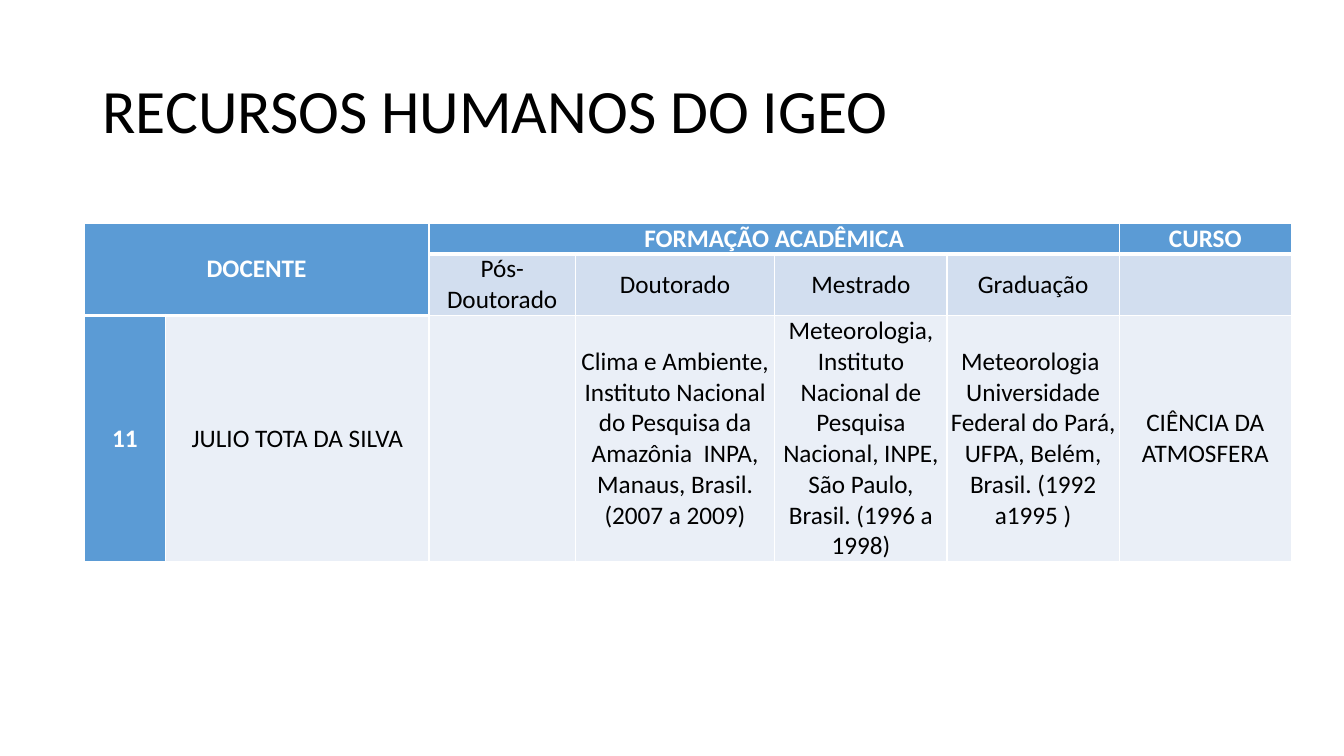
from pptx import Presentation
from pptx.dml.color import RGBColor
from pptx.enum import text as t
from pptx.oxml import parse_xml
from pptx.oxml.ns import nsdecls
from pptx.util import Pt

BLACK, WHITE = "000000", "FFFFFF"
HEADER, SUBHEADER, BODY = "5B9BD5", "D2DEEF", "EAEFF7"

COLUMN_WIDTHS = [58.5, 188, 104.5, 142.5, 123, 123, 123]
ROW_HEIGHTS = [22, 44, 176]
CONTENT = [
    ["DOCENTE", "", "FORMAÇÃO ACADÊMICA", "", "", "", "CURSO"],
    ["", "", "Pós-Doutorado", "Doutorado", "Mestrado", "Graduação", ""],
    ["11", "JULIO TOTA DA SILVA", "",
     "Clima e Ambiente, Instituto Nacional do Pesquisa da Amazônia  INPA, Manaus, Brasil. (2007 a 2009)",
     "Meteorologia, Instituto Nacional de Pesquisa Nacional, INPE, São Paulo, Brasil. (1996 a 1998)",
     "Meteorologia  Universidade Federal do Pará, UFPA, Belém, Brasil. (1992 a1995 )",
     "CIÊNCIA DA ATMOSFERA"],
]


def rgb(color):
    return RGBColor.from_string(color)


def write(frame, words, size=18, color=BLACK, bold=False, align=None, spacing=None):
    frame.vertical_anchor = t.MSO_ANCHOR.MIDDLE
    paragraph = frame.paragraphs[0]
    paragraph.alignment = align
    paragraph.line_spacing = spacing
    font = paragraph.font
    if words:
        run = paragraph.add_run()
        run.text = words
        font = run.font
    font.name, font.size, font.bold = "Calibri", Pt(size), bold
    font.color.rgb = rgb(color)


def set_borders(cell, top, bottom):
    """Draw white cell borders; top and bottom are widths in points."""
    properties = cell._tc.get_or_add_tcPr()
    for index, (side, width) in enumerate([("L", 1), ("R", 1), ("T", top), ("B", bottom)]):
        properties.insert(index, parse_xml(
            f'<a:ln{side} {nsdecls("a")} w="{Pt(width)}"><a:solidFill>'
            f'<a:srgbClr val="{WHITE}"/></a:solidFill></a:ln{side}>'))


def rule_below(row, column):
    """Width of the line under a cell: heavy beneath the header cells."""
    return 3 if row == 0 or (row == 1 and column < 2) else 1


def cell_fill(row, column):
    if row == 0 or column == 0 or (row == 1 and column == 1):
        return HEADER
    return SUBHEADER if row == 1 else BODY


def add_title(slide, left, top, width, height):
    title = slide.shapes.title
    title.left, title.top, title.width, title.height = map(Pt, (left, top, width, height))
    write(title.text_frame, "RECURSOS HUMANOS DO IGEO", size=44,
          align=t.PP_ALIGN.LEFT, spacing=0.9)


def add_staff_table(slide, left, top):
    staff = slide.shapes.add_table(
        len(ROW_HEIGHTS), len(COLUMN_WIDTHS), Pt(left), Pt(top),
        Pt(sum(COLUMN_WIDTHS)), Pt(sum(ROW_HEIGHTS))).table
    for column, width in zip(staff.columns, COLUMN_WIDTHS):
        column.width = Pt(width)
    for row, height in zip(staff.rows, ROW_HEIGHTS):
        row.height = Pt(height)

    for r, entries in enumerate(CONTENT):
        for c, words in enumerate(entries):
            cell = staff.cell(r, c)
            fill = cell_fill(r, c)
            is_header = fill == HEADER
            cell.fill.solid()
            cell.fill.fore_color.rgb = rgb(fill)
            set_borders(cell, rule_below(r - 1, c), rule_below(r, c))
            cell.margin_left = cell.margin_right = Pt(1.5)
            cell.margin_top = cell.margin_bottom = 0
            cell.vertical_anchor = t.MSO_ANCHOR.MIDDLE
            write(cell.text_frame, words, color=WHITE if is_header else BLACK,
                  bold=is_header, align=t.PP_ALIGN.CENTER)

    staff.cell(0, 0).merge(staff.cell(1, 1))
    staff.cell(0, 2).merge(staff.cell(0, 5))


def main():
    deck = Presentation()
    deck.slide_width, deck.slide_height = Pt(960), Pt(540)
    slide = deck.slides.add_slide(deck.slide_layouts[5])
    add_title(slide, 66, 28.75, 828, 104.4)
    add_staff_table(slide, 60, 159.4)
    deck.save("out.pptx")


if __name__ == "__main__":
    main()
